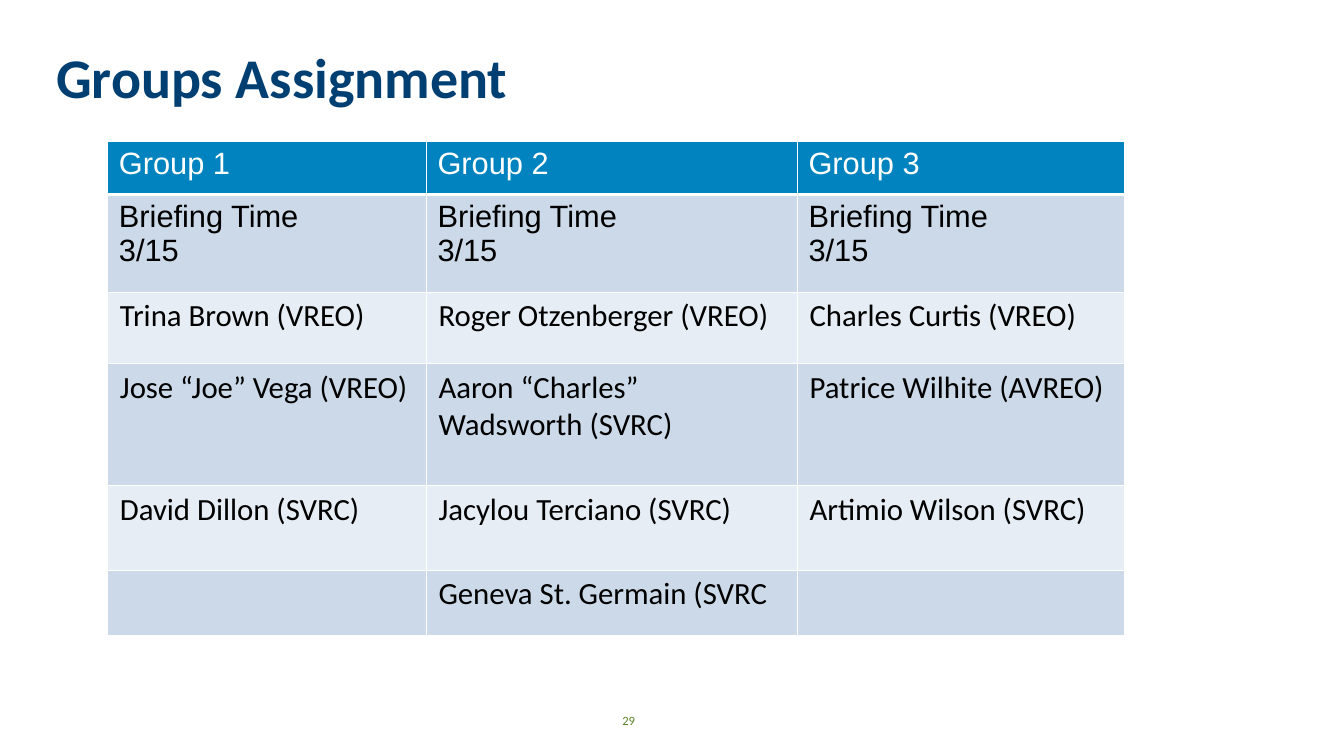
"""Build the group assignment slide with its table of three groups."""
from lxml import etree
from pptx import Presentation
from pptx import util as u
from pptx.dml.color import RGBColor
from pptx.enum import text
from pptx.oxml import ns

COLORS = {"title": "003F72", "header": "0083BE", "dark_band": "CCD9E8",
          "light_band": "E7EDF4", "white": "FFFFFF", "ink": "000000", "number": "598527"}
TITLE = "Groups Assignment"
PAGE_NUMBER = "29"
GROUPS = [
    ("Group 1", "Group 2", "Group 3"),
    ("Briefing Time\n3/15",) * 3,
    ("Trina Brown (VREO)", "Roger Otzenberger (VREO)", "Charles Curtis (VREO)"),
    ("Jose “Joe” Vega (VREO)", "Aaron “Charles” Wadsworth (SVRC)", "Patrice Wilhite (AVREO)"),
    ("David Dillon (SVRC)", "Jacylou Terciano (SVRC)", "Artimio Wilson (SVRC)"),
    ("", "Geneva St. Germain (SVRC", ""),
]
COLUMN_WIDTHS = [3.16, 3.68, 3.24]
ROW_HEIGHTS = [0.53, 0.97, 0.71, 1.21, 0.84, 0.65]
TABLE_LEFT, TABLE_TOP = 1.07, 1.4


def style_font(font, name, size, color, bold=False):
    font.name, font.size, font.bold = name, u.Pt(size), bold
    font.color.rgb = RGBColor.from_string(COLORS[color])


def add_label(page, place, words, size, color, bold=False, align=text.PP_ALIGN.LEFT):
    box = page.shapes.add_textbox(*map(u.Inches, place))
    frame = box.text_frame
    frame.word_wrap = True
    frame.vertical_anchor = text.MSO_ANCHOR.MIDDLE
    para = frame.paragraphs[0]
    para.text, para.alignment = words, align
    style_font(para.font, "Calibri", size, color, bold)
    return para


def set_borders(cell, bottom_width):
    properties = cell._tc.get_or_add_tcPr()
    for side, width in (("L", 1), ("R", 1), ("T", 1), ("B", bottom_width)):
        line = etree.SubElement(properties, ns.qn(f"a:ln{side}"), w=str(u.Pt(width)))
        fill = etree.SubElement(line, ns.qn("a:solidFill"))
        etree.SubElement(fill, ns.qn("a:srgbClr"), val=COLORS["white"])


def fill_cell(cell, words, row):
    is_header = row == 0
    band = "header" if is_header else "dark_band" if row % 2 else "light_band"
    set_borders(cell, 3 if is_header else 1)
    cell.fill.solid()
    cell.fill.fore_color.rgb = RGBColor.from_string(COLORS[band])
    cell.margin_left = cell.margin_right = u.Inches(0.11 if row < 2 else 0.12)
    cell.margin_top = cell.margin_bottom = u.Inches(0.05)
    cell.text = words
    for para in cell.text_frame.paragraphs:
        style_font(para.font, "Arial" if row < 2 else "Calibri", 22,
                   "white" if is_header else "ink")


def add_groups(page):
    frame = page.shapes.add_table(
        len(GROUPS), len(COLUMN_WIDTHS), u.Inches(TABLE_LEFT), u.Inches(TABLE_TOP),
        u.Inches(sum(COLUMN_WIDTHS)), u.Inches(sum(ROW_HEIGHTS)))
    table = frame.table
    for column, width in zip(table.columns, COLUMN_WIDTHS):
        column.width = u.Inches(width)
    for row, (entries, height) in enumerate(zip(GROUPS, ROW_HEIGHTS)):
        table.rows[row].height = u.Inches(height)
        for column, words in enumerate(entries):
            fill_cell(table.cell(row, column), words, row)


def main():
    deck = Presentation()
    deck.slide_width, deck.slide_height = u.Inches(13.33), u.Inches(7.5)
    page = deck.slides.add_slide(deck.slide_layouts[6])
    title = add_label(page, (0.46, 0.37, 10.63, 0.85), TITLE, 40, "title", bold=True)
    title.line_spacing = 0.9
    add_groups(page)
    add_label(page, (5.86, 6.95, 0.75, 0.4), PAGE_NUMBER, 9, "number",
              align=text.PP_ALIGN.CENTER)
    deck.save("out.pptx")


if __name__ == "__main__":
    main()
